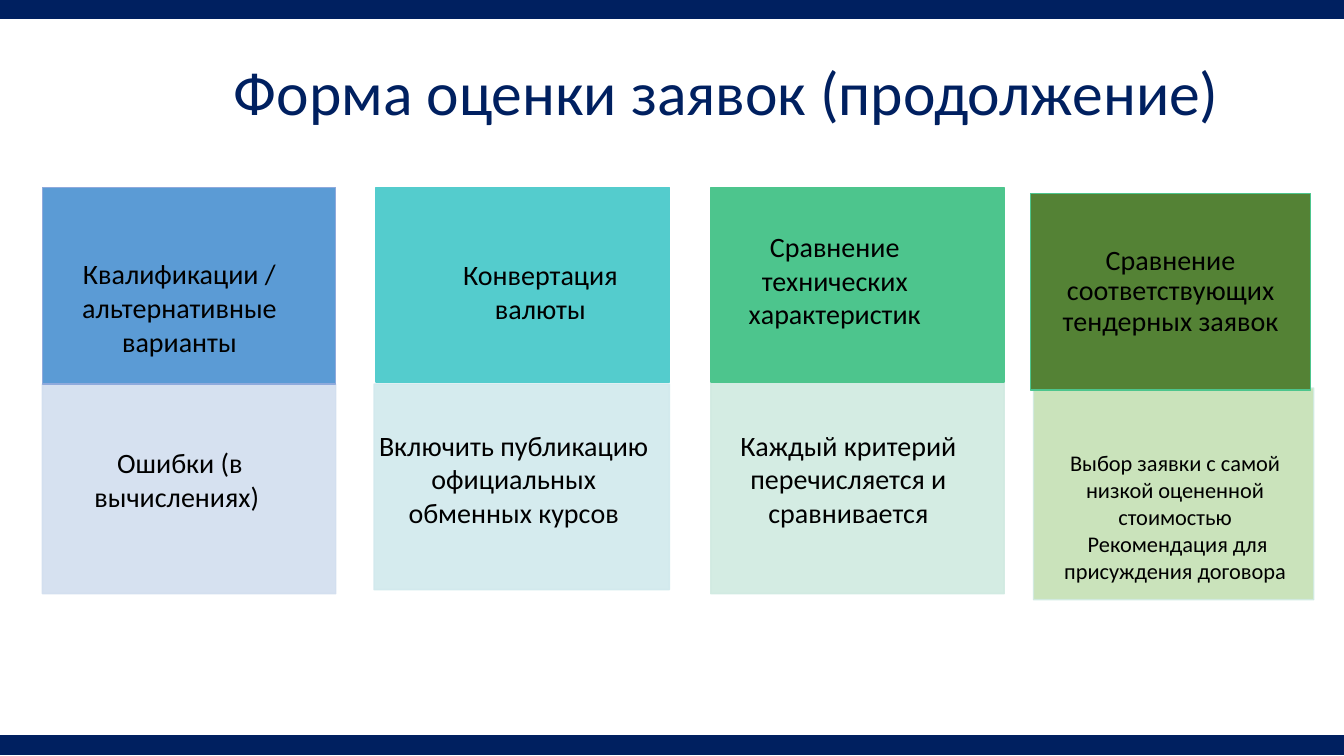
import pptx
import pptx.util
import pptx.dml.color
import pptx.enum.shapes
import pptx.enum.text
import pptx.oxml.ns
import lxml.etree

Inches = pptx.util.Inches
Pt = pptx.util.Pt
Anchor = pptx.enum.text.MSO_ANCHOR

COLORS = {
    "navy": "002060", "black": "000000",
    "blue": "5B9BD5", "blue_edge": "8FAADC", "blue_pale": "D2DEEF",
    "teal": "54CCCD", "teal_pale": "D1E9ED",
    "green": "4DC58D", "green_pale": "D0EAE1",
    "olive": "548235", "olive_pale": "C5E0B4",
}

COLUMNS = [
    {
        "head": (0.42, 1.86, 2.91, 1.95), "head_colors": ("blue", "blue_edge"),
        "body": (0.42, 3.81, 2.91, 2.08), "body_colors": ("blue_pale", "blue_pale"),
        "head_text": (0.57, 2.5, 2.42, 1.11), "body_text": (0.33, 4.37, 2.91, 0.77),
        "title": "Квалификации / альтернативные варианты",
        "lines": ["Ошибки (в вычислениях) "],
    },
    {
        "head": (3.73, 1.86, 2.91, 1.93), "head_colors": ("teal", "teal"),
        "body": (3.71, 3.81, 2.93, 2.04), "body_colors": ("teal_pale", "teal_pale"),
        "head_text": (4.43, 2.51, 1.86, 0.77), "body_text": (3.64, 4.2, 2.91, 1.11),
        "title": "Конвертация валюты",
        "lines": ["Включить публикацию официальных обменных курсов"],
    },
    {
        "head": (7.05, 1.86, 2.91, 1.93), "head_colors": ("green", "green"),
        "body": (7.05, 3.79, 2.91, 2.1), "body_colors": ("green_pale", "green_pale"),
        "head_text": (7.21, 2.23, 2.14, 1.11), "body_text": (6.96, 4.2, 2.91, 1.11),
        "title": "Сравнение технических характеристик",
        "lines": ["Каждый критерий перечисляется и сравнивается"],
    },
    {
        "head": (10.22, 1.92, 2.78, 1.95), "head_colors": ("olive", "green"),
        "body": (10.25, 3.85, 2.78, 2.1), "body_colors": ("olive_pale", "green_pale"),
        "head_text": (10.22, 1.92, 2.78, 1.95), "body_text": (10.37, 4.19, 2.57, 1.87),
        "title": "Сравнение соответствующих тендерных заявок",
        "lines": ["Выбор заявки с самой низкой оцененной стоимостью",
                  " Рекомендация для присуждения договора"],
        "anchor": Anchor.MIDDLE, "spacing": 0.9, "body_size": 16,
    },
]


def rgb(name):
    """Return the named colour."""
    return pptx.dml.color.RGBColor.from_string(COLORS[name])


def add_panel(page, box, fill, edge, opacity=100):
    """Draw a filled rectangle with a thin edge."""
    panel = page.shapes.add_shape(
        pptx.enum.shapes.MSO_SHAPE.RECTANGLE, *map(Inches, box))
    panel.shadow.inherit = False
    panel.fill.solid()
    panel.fill.fore_color.rgb = rgb(fill)
    panel.line.color.rgb = rgb(edge)
    panel.line.width = Pt(1)
    if opacity < 100:
        for color in panel._element.spPr.iter(pptx.oxml.ns.qn("a:srgbClr")):
            lxml.etree.SubElement(
                color, pptx.oxml.ns.qn("a:alpha"), val=str(opacity * 1000))


def add_text(page, box, lines, size=20, color="black", anchor=Anchor.TOP, spacing=None):
    """Place centred paragraphs in a wrapping text box."""
    frame = page.shapes.add_textbox(*map(Inches, box)).text_frame
    frame.word_wrap = True
    frame.vertical_anchor = anchor
    frame.text = "\n".join(lines)
    for para in frame.paragraphs:
        para.alignment = pptx.enum.text.PP_ALIGN.CENTER
        para.line_spacing = spacing
        para.font.name = "Calibri"
        para.font.size = Pt(size)
        para.font.color.rgb = rgb(color)


def add_column(page, column):
    """Draw one step: a strong head above a pale body, each with its text."""
    anchor = column.get("anchor", Anchor.TOP)
    add_panel(page, column["body"], *column["body_colors"], opacity=90)
    add_panel(page, column["head"], *column["head_colors"])
    add_text(page, column["head_text"], [column["title"]],
             anchor=anchor, spacing=column.get("spacing"))
    add_text(page, column["body_text"], column["lines"],
             size=column.get("body_size", 20), anchor=anchor)


def add_frame(page, title):
    """Draw the top and bottom bars and the slide title."""
    for top in (0, 7.3):
        add_panel(page, (0, top, 13.33, 0.18), "navy", "navy")
    add_text(page, (2.03, 0.47, 10.36, 0.95), [title], size=44,
             color="navy", anchor=Anchor.MIDDLE, spacing=0.9)


def main():
    """Build and save the deck."""
    deck = pptx.Presentation()
    deck.slide_width = Inches(13.33)
    deck.slide_height = Inches(7.5)
    page = deck.slides.add_slide(deck.slide_layouts[6])
    add_frame(page, "Форма оценки заявок (продолжение)")
    for column in COLUMNS:
        add_column(page, column)
    deck.save("out.pptx")


if __name__ == "__main__":
    main()
